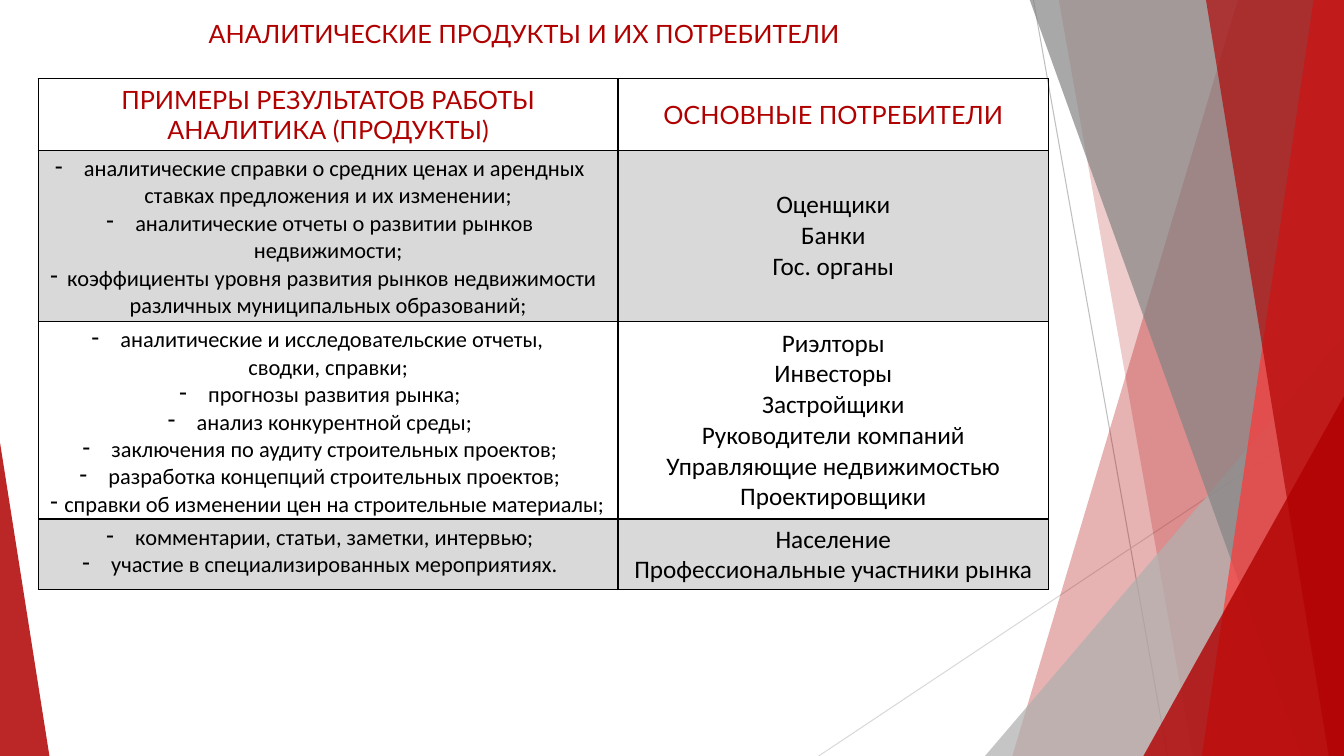
from lxml import etree
from pptx import Presentation
from pptx.dml.color import RGBColor
from pptx.enum.shapes import MSO_CONNECTOR, MSO_SHAPE
from pptx.enum.text import MSO_ANCHOR, PP_ALIGN
from pptx.oxml.ns import qn
from pptx.util import Inches, Pt

COLORS = {
    "red": "B00000", "bright": "FF3737", "gray": "848484", "silver": "B0B0B0",
    "line": "BFBFBF", "pale": "D9D9D9", "black": "000000",
}


def set_fill(sp, color, alpha):
    sp.shadow.inherit = False
    sp.fill.solid()
    sp.fill.fore_color.rgb = RGBColor.from_string(COLORS[color])
    clr = sp.fill._xPr.find(qn("a:solidFill"))[0]
    etree.SubElement(clr, qn("a:alpha"), val=str(alpha * 1000))
    sp.line.fill.background()


def add_text(p, text, font, size, color):
    p.alignment = PP_ALIGN.CENTER
    r = p.add_run()
    r.text = text
    r.font.name = font
    r.font.size = Pt(size)
    r.font.color.rgb = RGBColor.from_string(COLORS[color])


prs = Presentation()
prs.slide_width, prs.slide_height = Inches(13.33), Inches(7.5)
s = prs.slides.add_slide(prs.slide_layouts[6])

# Thin crossing lines
for x1, y1, x2, y2, color in [
    (10.25, 0, 11.58, 7.5, "line"),
    (13.33, 4.03, 8.12, 7.5, "pale"),
]:
    cn = s.shapes.add_connector(MSO_CONNECTOR.STRAIGHT, Inches(x1), Inches(y1),
                                Inches(x2), Inches(y2))
    cn.line.color.rgb = RGBColor.from_string(COLORS[color])
    cn.line.width = Pt(0.75)
    etree.SubElement(cn._element.spPr, qn("a:effectLst"))

# Translucent facets: bands run from a slanted left edge to the right slide edge
facets = [
    ("band", 12.28, 10.04, "red", 30),
    ("band", 10.5, 11.83, "red", 20),
    ("triangle", 9.77, 3.33, 3.56, 1, "silver", 72),
    ("band", 10.21, 12.91, "gray", 70),
    ("band", 13.03, 11.92, "bright", 70),
    ("band", 11.96, 13.18, "red", 65),
    ("triangle", 11.34, 3.93, 1.99, 1, "red", 80),
    ("triangle", 0, 4.39, 0.49, 0, "red", 85),
]
for kind, *geometry, color, alpha in facets:
    if kind == "band":
        top, bottom = geometry
        fb = s.shapes.build_freeform(Inches(top), Inches(-0.01))
        fb.add_line_segments([(Inches(x), Inches(y)) for x, y in
                              [(13.33, -0.01), (13.33, 7.5), (bottom, 7.5)]])
        sp = fb.convert_to_shape()
    else:
        x, y, w, apex = geometry
        sp = s.shapes.add_shape(MSO_SHAPE.ISOSCELES_TRIANGLE, Inches(x), Inches(y),
                                Inches(w), Inches(7.5 - y))
        sp.adjustments[0] = apex
    set_fill(sp, color, alpha)

# Title
tf = s.shapes.add_textbox(0, Inches(0.13), Inches(10.4), Inches(0.4)).text_frame
tf.word_wrap = True
add_text(tf.paragraphs[0], "АНАЛИТИЧЕСКИЕ ПРОДУКТЫ И ИХ ПОТРЕБИТЕЛИ", "Lato", 18, "red")

# Table content: a leading "-" makes a bulleted paragraph
rows = [
    (["ПРИМЕРЫ РЕЗУЛЬТАТОВ РАБОТЫ АНАЛИТИКА (ПРОДУКТЫ)"], ["ОСНОВНЫЕ ПОТРЕБИТЕЛИ"]),
    (["- аналитические справки о средних ценах и арендных ставках предложения и их изменении;",
      "- аналитические отчеты о развитии рынков недвижимости;",
      "-коэффициенты уровня развития рынков недвижимости различных муниципальных образований;"],
     ["Оценщики", "Банки", "Гос. органы"]),
    (["- аналитические и исследовательские отчеты, ",
      "сводки, справки;",
      "- прогнозы развития рынка;",
      "- анализ конкурентной среды;",
      "- заключения по аудиту строительных проектов;",
      "- разработка концепций строительных проектов;",
      "- справки об изменении цен на строительные материалы;"],
     ["Риэлторы", "Инвесторы", "Застройщики", "Руководители компаний",
      "Управляющие недвижимостью", "Проектировщики"]),
    (["- комментарии, статьи, заметки, интервью;",
      "- участие в специализированных мероприятиях."],
     ["Население", "Профессиональные участники рынка"]),
]
widths = [5.75, 4.27]
heights = [0.71, 1.7, 1.96, 0.7]

# Table
table = s.shapes.add_table(len(rows), len(widths), Inches(0.38), Inches(0.78),
                           Inches(sum(widths)), Inches(sum(heights))).table
for col, width in zip(table.columns, widths):
    col.width = Inches(width)
for i, (row, height) in enumerate(zip(rows, heights)):
    table.rows[i].height = Inches(height)
    for j, lines in enumerate(row):
        cell = table.cell(i, j)
        products = i > 0 and j == 0
        cell.margin_left = cell.margin_right = Inches(0.12)
        cell.margin_top = Inches(0.05)
        cell.margin_bottom = Inches(0.01 if products else 0.05)
        cell.vertical_anchor = MSO_ANCHOR.TOP if products else MSO_ANCHOR.MIDDLE

        # Borders go before the fill in the cell properties
        tcPr = cell._tc.get_or_add_tcPr()
        for side in ("a:lnL", "a:lnR", "a:lnT", "a:lnB"):
            ln = etree.SubElement(tcPr, qn(side), w=str(Pt(1)))
            solid = etree.SubElement(ln, qn("a:solidFill"))
            etree.SubElement(solid, qn("a:srgbClr"), val=COLORS["black"])
        if i % 2:
            cell.fill.solid()
            cell.fill.fore_color.rgb = RGBColor.from_string(COLORS["pale"])
        else:
            cell.fill.background()

        tf = cell.text_frame
        for n, line in enumerate(lines):
            p = tf.add_paragraph() if n else tf.paragraphs[0]
            if line.startswith("-"):
                pPr = p._p.get_or_add_pPr()
                etree.SubElement(pPr, qn("a:buChar"), char="-")
                line = line[1:]
            if i == 0:
                add_text(p, line, "Lato", 18, "red")
            else:
                add_text(p, line, "Calibri", 16 if products else 18, "black")

prs.save("out.pptx")
